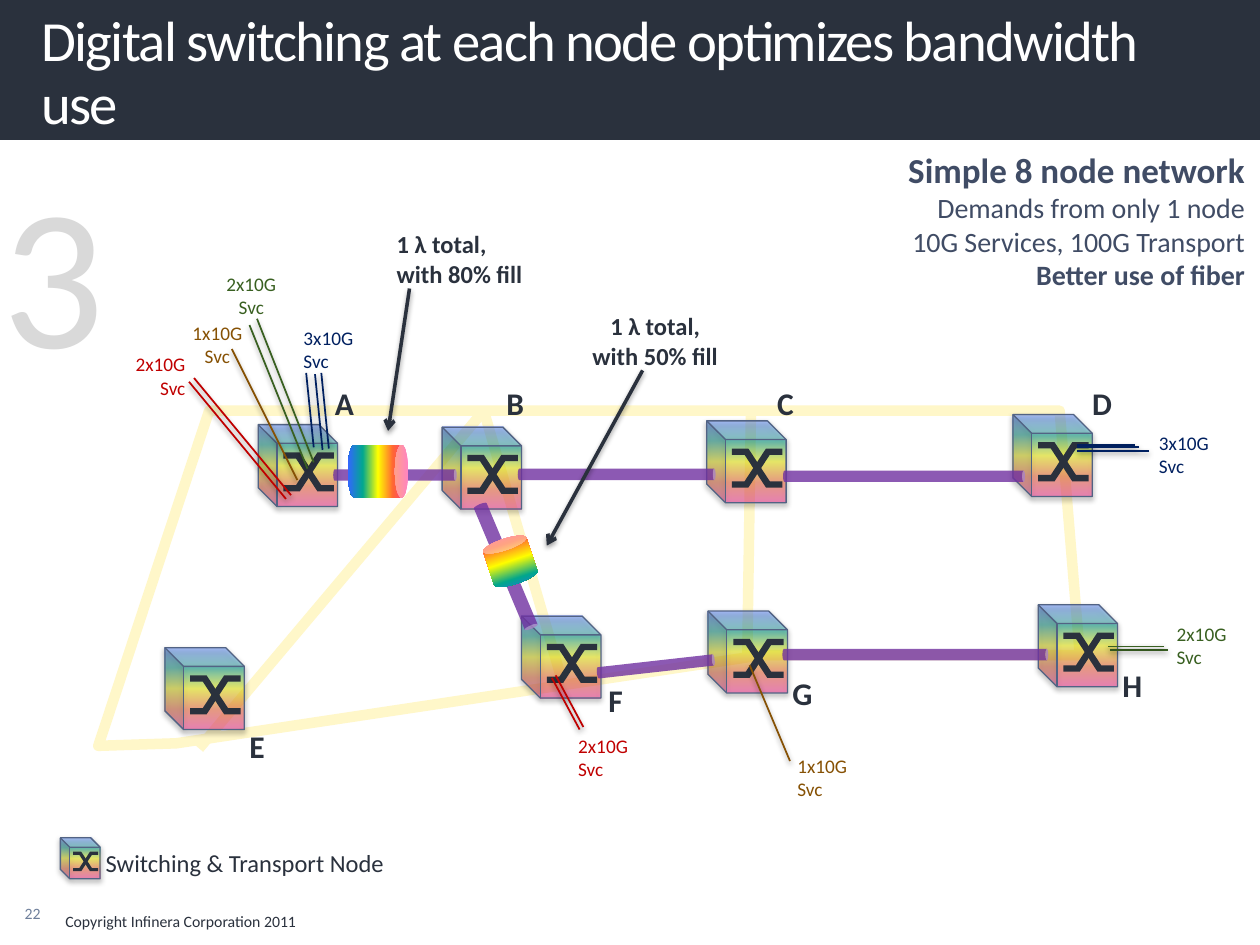
from dataclasses import dataclass

import pptx
import pptx.dml.color
import pptx.enum.shapes
import pptx.enum.text
import pptx.oxml
import pptx.oxml.ns
import pptx.util

PX = 9144  # EMU per px, at 100 px to the inch
FONT = "Calibri"
COLORS = {
    "ink": "2A313D", "white": "FFFFFF", "slate": "404C65", "number": "6E7F9B",
    "ghost": "D9D9D9", "edge": "526384", "fiber": "FFF7C9", "tube": "7030A0",
    "green": "396021", "navy": "002060", "red": "C00000", "brown": "865104",
}
SPECTRUM = ["FF3399", "FF6633", "FFFF00", "01A78F", "3366FF"]
STRAND = [(20, 22), (33, 22), (50, 48), (60, 48), (60, 53), (47, 53), (30, 27), (20, 27)]
LEFT, CENTER, RIGHT = (pptx.enum.text.PP_ALIGN.LEFT, pptx.enum.text.PP_ALIGN.CENTER,
                       pptx.enum.text.PP_ALIGN.RIGHT)
SHAPES = pptx.enum.shapes.MSO_SHAPE


@dataclass
class Node:
    name: str
    left: int
    top: int
    label_left: int
    label_top: int


@dataclass
class Link:
    start: tuple[int, int]
    end: tuple[int, int]
    color: str
    width: int = 1
    arrow: bool = False
    shadow: bool = True


@dataclass
class Can:
    box: tuple[int, int, int, int]
    rotation: float = 90
    flip_vertical: bool = False
    spectrum: bool = False


@dataclass
class Label:
    lines: list[str]
    box: tuple[int, int, int, int]
    size: int
    color: str
    align: object = LEFT
    bold: bool = False
    wrap: bool = True


NODES = [
    Node("C", 561, 334, 607, 300), Node("D", 804, 329, 857, 300),
    Node("H", 824, 480, 881, 524), Node("G", 562, 485, 619, 530),
    Node("F", 414, 489, 473, 536), Node("A", 205, 337, 256, 300),
    Node("B", 351, 339, 392, 300), Node("E", 131, 514, 188, 572),
]
FIBER_RING = [(140, 590), (605, 520), (857, 520), (841, 326), (166, 326), (78, 592)]
FIBERS = [Link(start, end, "fiber", 6, shadow=False) for start, end in [
    ((384, 326), (158, 594)), ((596, 326), (593, 524)), ((384, 326), (446, 540))]]
TUBES = [
    Can((309, 328, 9, 98)), Can((396, 396, 11, 107), 337.2, True),
    Can((485, 298, 9, 157)), Can((713, 282, 9, 192)),
    Can((722, 414, 9, 211)), Can((516, 482, 9, 94), 83.6),
]
WAVELENGTHS = [Can((279, 350, 42, 48), spectrum=True),
               Can((387, 427, 36, 37), 341.7, spectrum=True)]
SERVICE_LINES = {
    "green": [((244, 372), (198, 258)), ((249, 367), (204, 253)),
              ((927, 516), (881, 516)), ((924, 513), (879, 513))],
    "navy": [((249, 355), (243, 296)), ((256, 357), (250, 297)), ((261, 356), (255, 296)),
             ((901, 353), (855, 353)), ((904, 355), (855, 355)), ((912, 358), (855, 358))],
    "red": [((231, 393), (154, 300)), ((227, 396), (150, 303)),
            ((463, 577), (441, 536)), ((460, 579), (438, 538))],
    "brown": [((627, 604), (595, 528)), ((236, 381), (184, 277))],
}
CALLOUT_ARROWS = [Link((325, 229), (308, 342), "ink", 2, True),
                  Link((510, 294), (434, 433), "ink", 2, True)]
SERVICE_LABELS = [
    Label([text], (left, top, 67, 47), 11, color, align)
    for text, left, top, color, align in [
        ("2x10G Svc", 166, 211, "green", CENTER), ("3x10G Svc", 231, 254, "navy", LEFT),
        ("2x10G Svc", 90, 275, "red", RIGHT), ("2x10G Svc", 924, 489, "green", LEFT),
        ("2x10G Svc", 449, 578, "red", LEFT), ("3x10G Svc", 910, 337, "navy", LEFT),
        ("1x10G Svc", 139, 250, "brown", CENTER), ("1x10G Svc", 623, 594, "brown", LEFT)]]
OTHER_LABELS = [
    Label(["Copyright Infinera Corporation 2011"], (42, 719, 457, 30), 9, "ink"),
    Label(["3"], (-8, 112, 102, 204), 115, "ghost", wrap=False),
    Label(["1 λ total,", "with 80% fill"], (305, 177, 258, 57), 14, "ink", bold=True),
    Label(["1 λ total,", "with 50% fill"], (391, 242, 258, 57), 14, "ink", CENTER, True),
    Label(["Switching & Transport Node"], (74, 668, 248, 34), 14, "ink", wrap=False),
]


def px(*values: float) -> list[int]:
    return [round(value * PX) for value in values]


def rgb(name: str) -> pptx.dml.color.RGBColor:
    return pptx.dml.color.RGBColor.from_string(COLORS[name])


def element(xml: str):
    head, rest = xml.split(" ", 1)
    return pptx.oxml.parse_xml(f"{head} {pptx.oxml.ns.nsdecls('a')} {rest}")


def part(shape, tag: str):
    return shape._element.spPr.find(pptx.oxml.ns.qn(tag))


def set_effects(shape, shadow: bool = False) -> None:
    """Call last: the effect list follows fill and line."""
    inner = ('<a:outerShdw blurRad="39370" dist="20320" dir="5400000" rotWithShape="0">'
             '<a:srgbClr val="000000"><a:alpha val="38000"/></a:srgbClr></a:outerShdw>')
    shape._element.spPr.append(element(f"<a:effectLst >{inner if shadow else ''}</a:effectLst>"))


def fill_spectrum(shape, angle: int, opacity: int = 100) -> None:
    stops = "".join(
        f'<a:gs pos="{index * 25000}"><a:srgbClr val="{color}">'
        f'<a:alpha val="{opacity * 1000}"/></a:srgbClr></a:gs>'
        for index, color in enumerate(SPECTRUM))
    part(shape, "a:prstGeom").addnext(element(
        f'<a:gradFill rotWithShape="1"><a:gsLst>{stops}</a:gsLst>'
        f'<a:lin ang="{angle * 60000}" scaled="0"/></a:gradFill>'))


def add_link(slide, link: Link) -> None:
    connector = slide.shapes.add_connector(
        pptx.enum.shapes.MSO_CONNECTOR.STRAIGHT, *px(*link.start, *link.end))
    connector.line.color.rgb = rgb(link.color)
    connector.line.width = pptx.util.Pt(link.width)
    if link.arrow:
        part(connector, "a:ln").append(element('<a:tailEnd type="arrow"/>'))
    set_effects(connector, link.shadow)


def add_can(slide, can: Can) -> None:
    shape = slide.shapes.add_shape(SHAPES.CAN, *px(*can.box))
    shape.rotation = can.rotation
    part(shape, "a:xfrm").set("flipH", "1")
    if can.flip_vertical:
        part(shape, "a:xfrm").set("flipV", "1")
    if can.spectrum:
        fill_spectrum(shape, 90)
    else:
        shape.fill.solid()
        shape.fill.fore_color.rgb = rgb("tube")
        part(shape, "a:solidFill")[0].append(element('<a:alpha val="80000"/>'))
    shape.line.fill.background()
    set_effects(shape)


def add_switch(slide, left: int, top: int, scale: float = 1) -> None:
    group = slide.shapes.add_group_shape()
    cube = group.shapes.add_shape(SHAPES.CUBE, *px(left, top, 63 * scale, 65 * scale))
    cube.adjustments[0] = 0.236
    part(cube, "a:xfrm").set("flipH", "1")
    fill_spectrum(cube, 270, 50)
    cube.line.color.rgb = rgb("edge")
    cube.line.width = pptx.util.Pt(0.75)
    set_effects(cube, True)
    for points in (STRAND, [(80 - x, y) for x, y in STRAND]):
        builder = group.shapes.build_freeform(*points[0], scale=PX * scale)
        builder.add_line_segments(points[1:], close=True)
        strand = builder.convert_to_shape(*px(left, top))
        strand.fill.solid()
        strand.fill.fore_color.rgb = rgb("ink")
        strand.line.fill.background()
        set_effects(strand)


def format_paragraph(paragraph, size: float, color: str, align, bold: bool = False) -> None:
    paragraph.alignment = align
    paragraph.font.name = FONT
    paragraph.font.size = pptx.util.Pt(size)
    paragraph.font.bold = bold
    paragraph.font.color.rgb = rgb(color)


def add_label(slide, label: Label):
    frame = slide.shapes.add_textbox(*px(*label.box)).text_frame
    frame.word_wrap = label.wrap
    frame.text = "\n".join(label.lines)
    for paragraph in frame.paragraphs:
        format_paragraph(paragraph, label.size, label.color, label.align, label.bold)
    return frame


def add_title(slide) -> None:
    banner = slide.shapes.add_shape(SHAPES.RECTANGLE, *px(0, 0, 1000, 111))
    banner.fill.solid()
    banner.fill.fore_color.rgb = rgb("ink")
    banner.line.fill.background()
    set_effects(banner)
    title = slide.shapes.title
    title._element.addprevious(banner._element)
    title.left, title.top, title.width, title.height = px(33, 7, 944, 102)
    frame = title.text_frame
    frame.text = "Digital switching at each node optimizes bandwidth use"
    frame.auto_size = pptx.enum.text.MSO_AUTO_SIZE.NONE
    frame.vertical_anchor = pptx.enum.text.MSO_ANCHOR.MIDDLE
    frame.margin_left = 0
    paragraph = frame.paragraphs[0]
    paragraph.line_spacing = pptx.util.Pt(36)
    format_paragraph(paragraph, 32.4, "white", LEFT)
    paragraph.runs[0]._r.get_or_add_rPr().set("spc", "-100")


def main() -> None:
    presentation = pptx.Presentation()
    presentation.slide_width, presentation.slide_height = px(1000, 750)
    slide = presentation.slides.add_slide(presentation.slide_layouts[5])
    add_title(slide)

    # Unused fiber plant
    builder = slide.shapes.build_freeform(*FIBER_RING[0], scale=PX)
    builder.add_line_segments(FIBER_RING[1:], close=True)
    ring = builder.convert_to_shape()
    ring.fill.background()
    ring.line.color.rgb = rgb("fiber")
    ring.line.width = pptx.util.Pt(6)
    set_effects(ring)
    for fiber in FIBERS:
        add_link(slide, fiber)

    # Nodes, lit paths and services
    for node in NODES:
        add_switch(slide, node.left, node.top)
    for tube in TUBES:
        add_can(slide, tube)
    for color, lines in SERVICE_LINES.items():
        for start, end in lines:
            add_link(slide, Link(start, end, color))
    for can in WAVELENGTHS:
        add_can(slide, can)
    for arrow in CALLOUT_ARROWS:
        add_link(slide, arrow)
    add_switch(slide, 48, 665, 0.5)

    # Text
    node_labels = [Label([node.name], (node.label_left, node.label_top, 35, 40),
                         18, "ink", bold=True, wrap=False) for node in NODES]
    for label in SERVICE_LABELS + OTHER_LABELS + node_labels:
        add_label(slide, label)
    number = add_label(slide, Label(["22"], (0, 712, 42, 25), 9, "number", RIGHT))
    number.vertical_anchor = pptx.enum.text.MSO_ANCHOR.MIDDLE
    summary = add_label(slide, Label(
        ["Simple 8 node network", "Demands from only 1 node",
         "10G Services, 100G Transport", "Better use of fiber"],
        (696, 113, 302, 116), 16, "slate", RIGHT))
    summary.paragraphs[0].font.size = pptx.util.Pt(20)
    for paragraph in (summary.paragraphs[0], summary.paragraphs[-1]):
        paragraph.font.bold = True

    presentation.save("out.pptx")


if __name__ == "__main__":
    main()
